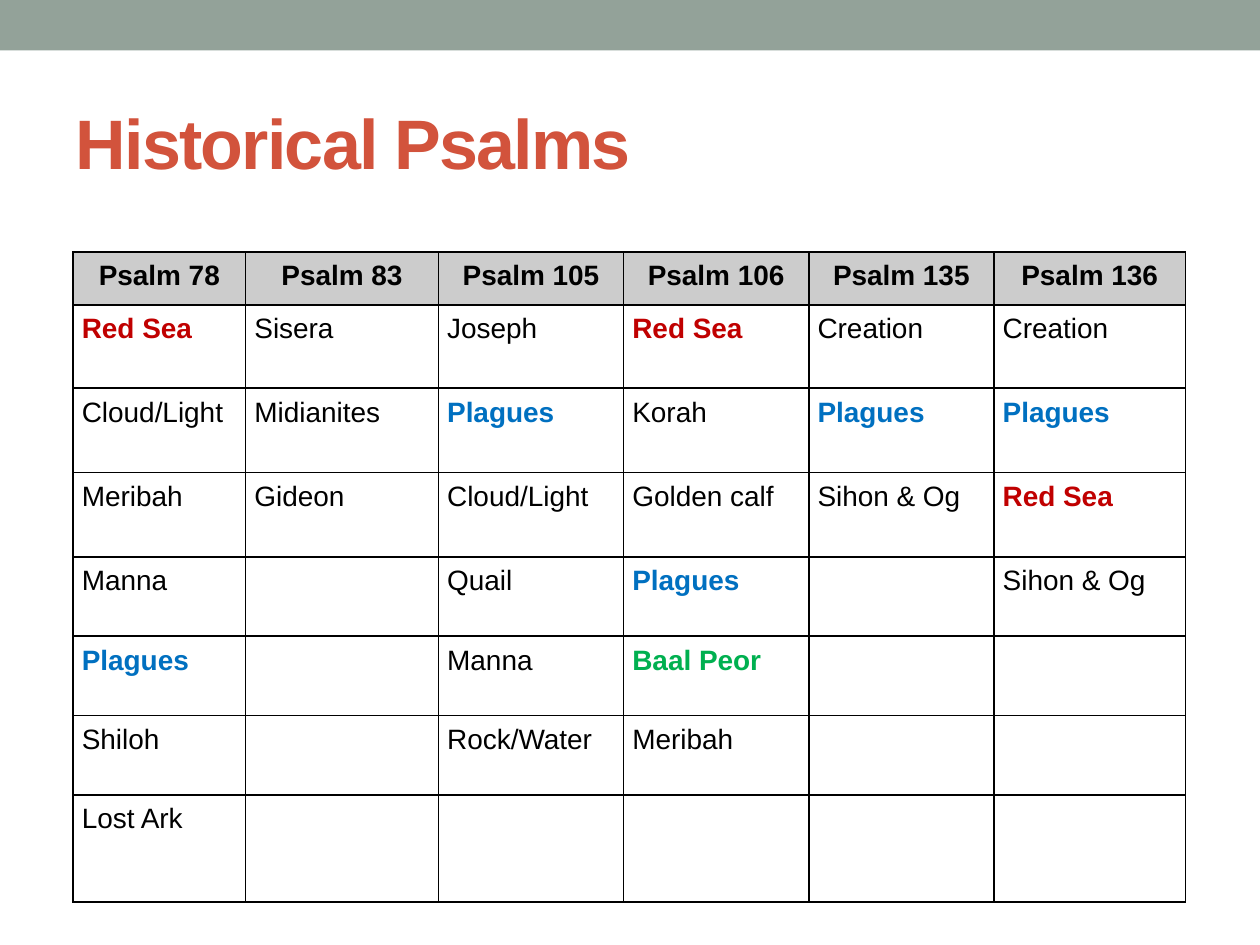
from dataclasses import dataclass

import pptx
import pptx.dml.color
import pptx.enum.shapes
import pptx.enum.text
import pptx.oxml
import pptx.oxml.ns
import pptx.util

Inches = pptx.util.Inches
Pt = pptx.util.Pt
Alignment = pptx.enum.text.PP_ALIGN
Anchor = pptx.enum.text.MSO_ANCHOR

FONT = "Arial"
BLACK = "000000"
HEADER_GRAY = "CCCCCC"
EVENT_COLORS = {"Red Sea": "C00000", "Plagues": "0070C0", "Baal Peor": "00B050"}


@dataclass
class Psalm:
    heading: str
    width: float
    events: list[str]


PSALMS = [
    Psalm("Psalm 78", 1.37, ["Red Sea", "Cloud/Light", "Meribah", "Manna", "Plagues", "Shiloh", "Lost Ark"]),
    Psalm("Psalm 83", 1.53, ["Sisera", "Midianites", "Gideon"]),
    Psalm("Psalm 105", 1.47, ["Joseph", "Plagues", "Cloud/Light", "Quail", "Manna", "Rock/Water"]),
    Psalm("Psalm 106", 1.47, ["Red Sea", "Korah", "Golden calf", "Plagues", "Baal Peor", "Meribah"]),
    Psalm("Psalm 135", 1.47, ["Creation", "Plagues", "Sihon & Og"]),
    Psalm("Psalm 136", 1.52, ["Creation", "Plagues", "Red Sea", "Sihon & Og"]),
]
ROW_HEIGHTS = [0.42, 0.66, 0.67, 0.67, 0.63, 0.63, 0.63, 0.85]


def rgb(color: str) -> pptx.dml.color.RGBColor:
    return pptx.dml.color.RGBColor.from_string(color)


def apply_format(target, values: dict) -> None:
    for name, value in values.items():
        setattr(target, name, value)


def place(left: float, top: float, width: float, height: float) -> dict:
    return {
        "left": Inches(left),
        "top": Inches(top),
        "width": Inches(width),
        "height": Inches(height),
    }


def write_run(paragraph, text: str, size: float, color: str, bold: bool):
    run = paragraph.add_run()
    run.text = text
    apply_format(run.font, {"name": FONT, "size": Pt(size), "bold": bold})
    run.font.color.rgb = rgb(color)
    return run


def add_banner(slide) -> None:
    banner = slide.shapes.add_shape(
        pptx.enum.shapes.MSO_SHAPE.RECTANGLE, **place(0, 0, 10, 0.4)
    )
    banner.shadow.inherit = False
    banner.fill.solid()
    banner.fill.fore_color.rgb = rgb("93A299")
    banner.line.fill.background()


def format_title(slide, text: str) -> None:
    title = slide.shapes.title
    apply_format(title, place(0.5, 0.58, 9, 1.08))
    title.text_frame.vertical_anchor = Anchor.MIDDLE
    paragraph = title.text_frame.paragraphs[0]
    paragraph.alignment = Alignment.LEFT
    run = write_run(paragraph, text, 40, "D2533C", True)
    run.font._element.set("spc", "-100")


def add_borders(cell) -> None:
    properties = cell._tc.get_or_add_tcPr()
    for side in ("L", "R", "T", "B"):
        properties.append(pptx.oxml.parse_xml(
            f'<a:ln{side} {pptx.oxml.ns.nsdecls("a")} w="{Pt(1)}">'
            f'<a:solidFill><a:srgbClr val="{BLACK}"/></a:solidFill></a:ln{side}>'
        ))


def format_cell(cell, text: str, is_header: bool) -> None:
    margins = ("margin_left", "margin_right", "margin_top", "margin_bottom")
    apply_format(cell, dict.fromkeys(margins, Inches(0.07)))
    add_borders(cell)
    if is_header:
        cell.fill.solid()
        cell.fill.fore_color.rgb = rgb(HEADER_GRAY)
    else:
        cell.fill.background()
    if text:
        paragraph = cell.text_frame.paragraphs[0]
        paragraph.alignment = Alignment.CENTER if is_header else Alignment.LEFT
        color = EVENT_COLORS.get(text, BLACK)
        write_run(paragraph, text, 16, color, is_header or text in EVENT_COLORS)


def add_psalm_table(slide, psalms: list[Psalm]) -> None:
    width = sum(psalm.width for psalm in psalms)
    frame = slide.shapes.add_table(
        len(ROW_HEIGHTS), len(psalms), **place(0.58, 2, width, sum(ROW_HEIGHTS))
    )
    table = frame.table
    apply_format(table, {"first_row": False, "horz_banding": False})
    for row, height in zip(table.rows, ROW_HEIGHTS):
        row.height = Inches(height)
    for column_index, psalm in enumerate(psalms):
        table.columns[column_index].width = Inches(psalm.width)
        texts = [psalm.heading, *psalm.events]
        for row_index in range(len(ROW_HEIGHTS)):
            text = texts[row_index] if row_index < len(texts) else ""
            format_cell(table.cell(row_index, column_index), text, row_index == 0)
    table.cell(1, 0).text_frame.paragraphs[0].alignment = Alignment.JUSTIFY


def main() -> None:
    presentation = pptx.Presentation()
    apply_format(presentation, {"slide_width": Inches(10), "slide_height": Inches(7.5)})
    slide = presentation.slides.add_slide(presentation.slide_layouts.get_by_name("Title Only"))
    add_banner(slide)
    format_title(slide, "Historical Psalms")
    add_psalm_table(slide, PSALMS)
    presentation.save("out.pptx")


if __name__ == "__main__":
    main()
